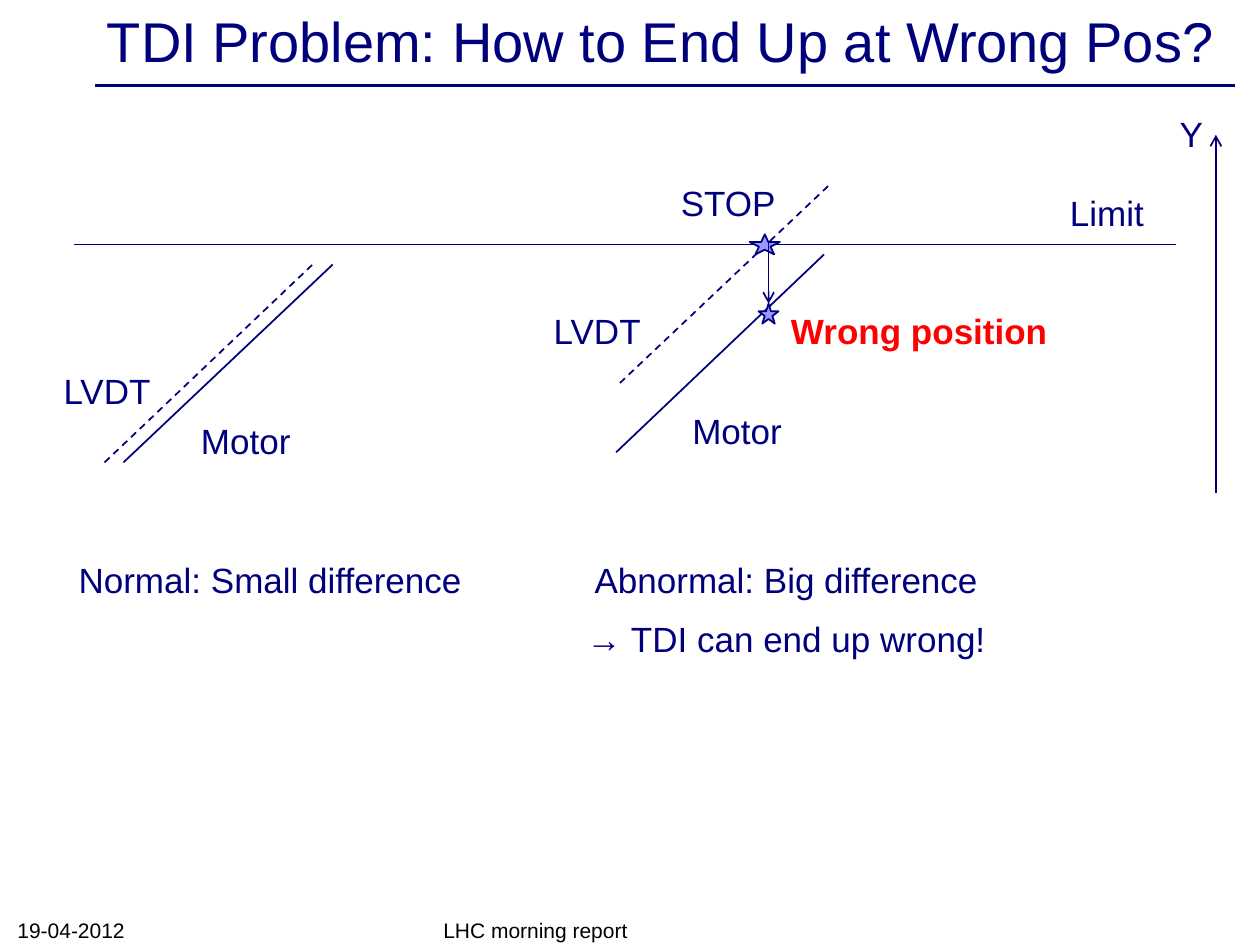
from dataclasses import dataclass

import pptx
import pptx.dml.color
import pptx.enum.dml
import pptx.enum.shapes
import pptx.enum.text
import pptx.oxml
import pptx.oxml.ns
import pptx.util
from pptx.util import Inches

NAVY = "00007D"
LILAC = "9999FF"
RED = "FF0000"
BLACK = "000000"
ALIGN = pptx.enum.text.PP_ALIGN
ANCHOR = pptx.enum.text.MSO_ANCHOR


@dataclass
class Line:
    start: tuple[float, float]
    end: tuple[float, float]
    width: float = 1
    dashed: bool = False
    arrow: bool = False


@dataclass
class Label:
    text: str
    left: float
    top: float
    width: float
    height: float = 0.44
    color: str = NAVY
    bold: bool = False


@dataclass
class Star:
    left: float
    top: float
    width: float
    height: float = 0.16


def rgb(color: str) -> pptx.dml.color.RGBColor:
    return pptx.dml.color.RGBColor.from_string(color)


def add_text(page, text: str, left: float, top: float, width: float, height: float, *,
             size: float = 20, color: str = NAVY, bold: bool = False,
             align=ALIGN.LEFT, anchor=ANCHOR.TOP, wrap: bool = True) -> None:
    box = page.shapes.add_textbox(Inches(left), Inches(top), Inches(width), Inches(height))
    frame = box.text_frame
    frame.word_wrap = wrap
    frame.vertical_anchor = anchor
    for index, content in enumerate(text.split("\n")):
        para = frame.add_paragraph() if index else frame.paragraphs[0]
        para.alignment = align
        if index:
            para.space_before = pptx.util.Pt(size / 2)
        span = para.add_run()
        span.text = content
        span.font.name = "Arial"
        span.font.size = pptx.util.Pt(size)
        span.font.bold = bold
        span.font.color.rgb = rgb(color)


def add_label(page, label: Label) -> None:
    add_text(page, label.text, label.left, label.top, label.width, label.height,
             color=label.color, bold=label.bold, align=ALIGN.CENTER, wrap=False)


def add_line(page, line: Line) -> None:
    connector = page.shapes.add_connector(
        pptx.enum.shapes.MSO_CONNECTOR.STRAIGHT,
        *(Inches(value) for value in line.start + line.end))
    connector.line.color.rgb = rgb(NAVY)
    connector.line.width = pptx.util.Pt(line.width)
    if line.dashed:
        connector.line.dash_style = pptx.enum.dml.MSO_LINE.DASH
    properties = connector._element.spPr
    if line.arrow:
        namespace = pptx.oxml.ns.nsdecls("a")
        head = pptx.oxml.parse_xml(f'<a:tailEnd {namespace} type="arrow"/>')
        properties.find(pptx.oxml.ns.qn("a:ln")).append(head)
    properties.append(pptx.oxml.parse_xml(f'<a:effectLst {pptx.oxml.ns.nsdecls("a")}/>'))


def add_star(page, star: Star) -> None:
    shape = page.shapes.add_shape(
        pptx.enum.shapes.MSO_SHAPE.STAR_5_POINT, Inches(star.left), Inches(star.top),
        Inches(star.width), Inches(star.height))
    shape.shadow.inherit = False
    shape.fill.solid()
    shape.fill.fore_color.rgb = rgb(LILAC)
    shape.line.color.rgb = rgb(NAVY)
    shape.line.width = pptx.util.Pt(1)


LINES = [
    Line((0.75, 0.68), (9.8, 0.68), width=2),  # title rule
    Line((0.59, 1.94), (9.33, 1.94)),  # limit
    Line((0.83, 3.67), (2.48, 2.1), dashed=True),  # normal LVDT
    Line((0.98, 3.67), (2.64, 2.1)),  # normal motor
    Line((4.92, 3.04), (6.58, 1.47), dashed=True),  # abnormal LVDT
    Line((4.89, 3.59), (6.54, 2.02)),  # abnormal motor
]
ARROWS = [
    Line((6.1, 1.92), (6.1, 2.41), arrow=True),  # stop to wrong position
    Line((9.65, 3.91), (9.65, 1.07), arrow=True),  # Y axis
]
STARS = [Star(5.95, 1.86, 0.24), Star(6.02, 2.41, 0.16)]
LABELS = [
    Label("Limit", 8.39, 1.47, 0.79),
    Label("LVDT", 0.4, 2.88, 0.9),
    Label("Motor", 1.49, 3.28, 0.92),
    Label("LVDT", 4.29, 2.41, 0.9),
    Label("Motor", 5.39, 3.2, 0.92),
    Label("STOP", 5.3, 1.39, 0.96),
    Label("Wrong position", 6.17, 2.41, 2.25, color=RED, bold=True),
    Label("Y", 9.26, 0.84, 0.39),
    Label("Normal: Small difference", 0.51, 4.38, 3.27),
    Label("Abnormal: Big difference\n→ TDI can end up wrong!", 4.55, 4.38, 3.38, 0.94),
]


def main() -> None:
    deck = pptx.Presentation()
    deck.slide_width, deck.slide_height = Inches(10), Inches(7.5)
    page = deck.slides.add_slide(deck.slide_layouts[6])

    # Title and footer
    add_text(page, "TDI Problem: How to End Up at Wrong Pos?", 0.75, 0.03, 9, 0.57,
             size=32, anchor=ANCHOR.MIDDLE)
    add_text(page, "19-04-2012", 0.04, 7.24, 2.33, 0.29,
             size=12, color=BLACK, anchor=ANCHOR.BOTTOM)
    add_text(page, "LHC morning report", 3.42, 7.25, 3.17, 0.28,
             size=12, color=BLACK, anchor=ANCHOR.BOTTOM)

    # Diagram
    for line in LINES:
        add_line(page, line)
    for star in STARS:
        add_star(page, star)
    for arrow in ARROWS:
        add_line(page, arrow)
    for label in LABELS:
        add_label(page, label)

    deck.save("out.pptx")


if __name__ == "__main__":
    main()
